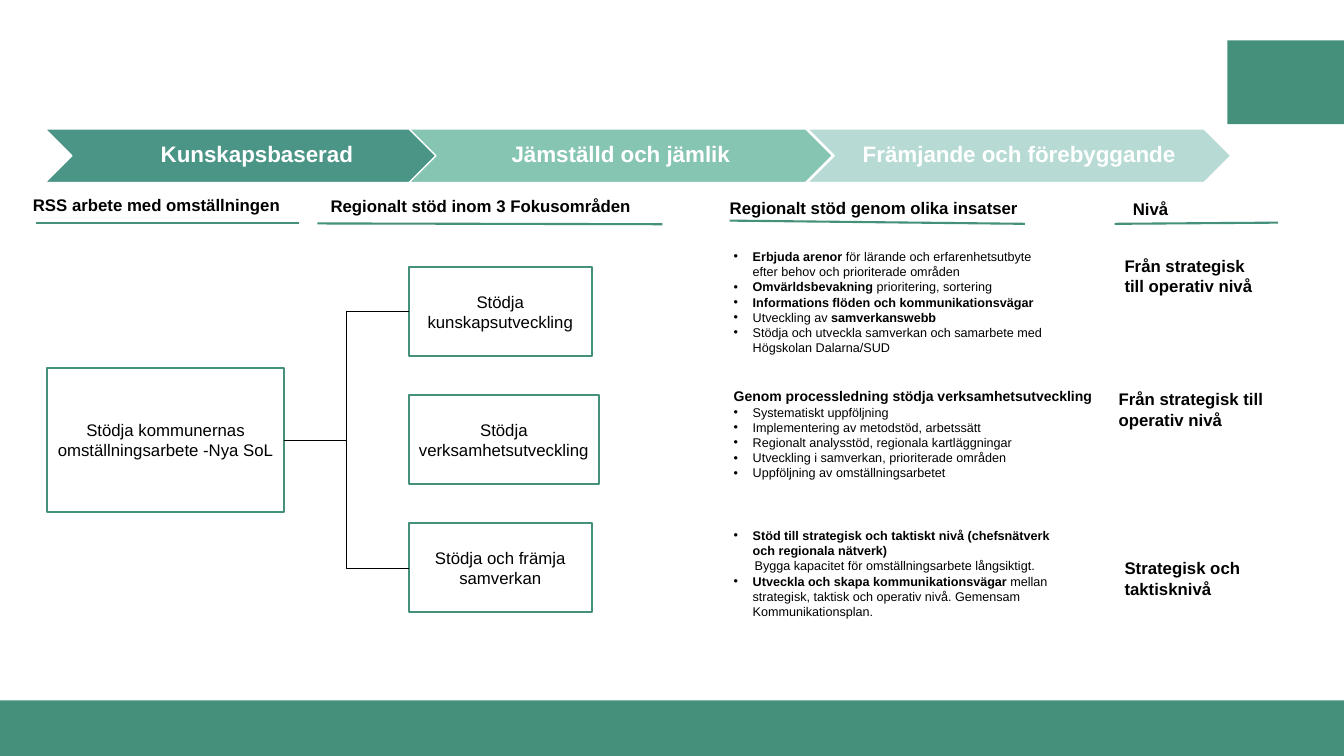
from dataclasses import dataclass

from lxml.etree import SubElement
from pptx import Presentation
from pptx.dml.color import RGBColor
from pptx.enum.shapes import MSO_CONNECTOR as Connector, MSO_SHAPE as Preset
from pptx.enum.text import MSO_ANCHOR as Anchor, PP_ALIGN as Align
from pptx.oxml.ns import qn
from pptx.util import Cm, Pt

COLORS = {
    "green": "45907A",
    "teal": "4B9587",
    "mint": "87C5B3",
    "pale": "B7DBD4",
    "white": "FFFFFF",
    "black": "000000",
}
FONT = "Arial"
BULLET_INDENT = Cm(0.48)
RIGHT_SITE, LEFT_SITE = 3, 1


@dataclass
class Run:
    text: str
    bold: bool = False


@dataclass
class Para:
    runs: list[Run]
    bullet: bool = True
    size: float = 9
    indent: float = 0


@dataclass
class Heading:
    text: str
    left: float
    top: float
    width: float
    rule: tuple[float, float, float, float]


@dataclass
class Measures:
    top: float
    width: float
    height: float
    paras: list[Para]


@dataclass
class Level:
    text: str
    left: float
    top: float
    width: float


def plain(text: str) -> Para:
    return Para([Run(text)])


def bold(text: str) -> Run:
    return Run(text, True)


CHEVRONS = [
    ("Kunskapsbaserad", 1.14, "teal"),
    ("Jämställd och jämlik", 10.31, "mint"),
    ("Främjande och förebyggande", 20.35, "pale"),
]
HEADINGS = [
    Heading("RSS arbete med omställningen", 0.58, 4.78, 7.57, (0.91, 5.61, 7.54, 5.61)),
    Heading("Regionalt stöd inom 3 Fokusområden", 8.08, 4.8, 8.46, (8, 5.63, 16.69, 5.65)),
    Heading("Regionalt stöd genom olika insatser", 18.14, 4.85, 8.23, (18.39, 5.56, 25.83, 5.64)),
    Heading("Nivå", 28.3, 4.88, 4.45, (28.09, 5.64, 32.21, 5.61)),
]
FOCUS_AREAS = [
    ("Stödja kunskapsutveckling", 4.6),
    ("Stödja verksamhetsutveckling", 4.78),
    ("Stödja och främja samverkan", 4.6),
]
MEASURES = [
    Measures(6.15, 8.59, 3.02, [
        Para([bold("Erbjuda arenor "),
              Run("för lärande och erfarenhetsutbyte efter behov och prioriterade områden")]),
        Para([bold("Omvärldsbevakning"), Run(" prioritering, sortering")]),
        Para([bold("Informations flöden och kommunikationsvägar")]),
        Para([Run("Utveckling av "), bold("samverkanswebb")]),
        plain("Stödja och utveckla samverkan och samarbete med Högskolan Dalarna/SUD"),
    ]),
    Measures(9.65, 10.06, 2.59, [
        Para([bold("Genom processledning stödja verksamhetsutveckling")], bullet=False, size=10),
        plain("Systematiskt uppföljning"),
        plain("Implementering av metodstöd, arbetssätt"),
        plain("Regionalt analysstöd, regionala kartläggningar"),
        plain("Utveckling i samverkan, prioriterade områden"),
        plain("Uppföljning av omställningsarbetet"),
    ]),
    Measures(13.18, 8.92, 3.07, [
        Para([bold("Stöd till strategisk och taktiskt nivå (chefsnätverk och regionala nätverk)")]),
        Para([Run("Bygga kapacitet för omställningsarbete långsiktigt.")], bullet=False, indent=0.53),
        Para([bold("Utveckla och skapa kommunikationsvägar "),
              Run("mellan strategisk, taktisk och operativ nivå. Gemensam Kommunikationsplan.")]),
    ]),
]
LEVELS = [
    Level("Från strategisk till operativ nivå", 28.09, 6.32, 4.09),
    Level("Från strategisk till operativ nivå", 27.94, 9.68, 4.27),
    Level("Strategisk och taktisknivå", 28.09, 13.94, 5.21),
]


def rgb(name: str) -> RGBColor:
    return RGBColor.from_string(COLORS[name])


def write(frame, paras: list[Para], *, color: str = "black", align=Align.LEFT,
          anchor=Anchor.TOP, spacing: float = 1.0, side_inset: float = 0.25) -> None:
    """Fill a text frame with formatted paragraphs."""
    frame.word_wrap = True
    frame.vertical_anchor = anchor
    frame.margin_left = frame.margin_right = Cm(side_inset)
    for index, para in enumerate(paras):
        line = frame.add_paragraph() if index else frame.paragraphs[0]
        line.alignment = align
        line.line_spacing = spacing
        props = line._p.get_or_add_pPr()
        if para.bullet:
            props.set("marL", str(BULLET_INDENT))
            props.set("indent", str(-BULLET_INDENT))
            SubElement(props, qn("a:buFont"), typeface=FONT)
            SubElement(props, qn("a:buChar"), char="•")
        else:
            props.set("marL", str(Cm(para.indent)))
            props.set("indent", "0")
            SubElement(props, qn("a:buNone"))
        for part in para.runs:
            run = line.add_run()
            run.text = part.text
            run.font.name = FONT
            run.font.size = Pt(para.size)
            run.font.bold = part.bold
            run.font.color.rgb = rgb(color)


def label(text: str, size: float = 12, is_bold: bool = False) -> list[Para]:
    return [Para([Run(text, is_bold)], bullet=False, size=size)]


def add_block(slide, preset, left: float, top: float, width: float, height: float, *,
              fill: str | None = None, line: str | None = None, weight: float = 1.5):
    block = slide.shapes.add_shape(preset, Cm(left), Cm(top), Cm(width), Cm(height))
    block.shadow.inherit = False
    if fill:
        block.fill.solid()
        block.fill.fore_color.rgb = rgb(fill)
    else:
        block.fill.background()
    if line:
        block.line.color.rgb = rgb(line)
        block.line.width = Pt(weight)
    else:
        block.line.fill.background()
    return block


def add_text(slide, left: float, top: float, width: float, height: float,
             paras: list[Para]) -> None:
    box = slide.shapes.add_textbox(Cm(left), Cm(top), Cm(width), Cm(height))
    write(box.text_frame, paras)


def add_line(slide, kind, ends: tuple[float, float, float, float], color: str, weight: float):
    line = slide.shapes.add_connector(kind, *(Cm(value) for value in ends))
    line.line.color.rgb = rgb(color)
    line.line.width = Pt(weight)
    SubElement(line._element.spPr, qn("a:effectLst"))
    return line


def add_box(slide, text: str, left: float, top: float, width: float, height: float):
    box = add_block(slide, Preset.RECTANGLE, left, top, width, height, line="green")
    write(box.text_frame, label(text), align=Align.CENTER, anchor=Anchor.MIDDLE, side_inset=0.2)
    return box


def main() -> None:
    deck = Presentation()
    deck.slide_width, deck.slide_height = Cm(33.87), Cm(19.05)
    slide = deck.slides.add_slide(deck.slide_layouts[6])

    add_block(slide, Preset.RECTANGLE, 30.93, 1.02, 2.94, 2.11, fill="green")
    add_block(slide, Preset.RECTANGLE, 0, 17.65, 33.87, 1.4, fill="green")

    support = add_box(slide, "Stödja kommunernas omställningsarbete -Nya SoL",
                      1.19, 9.27, 5.97, 3.63)
    for row, (text, width) in enumerate(FOCUS_AREAS):
        focus = add_box(slide, text, 10.31, 6.73 + row * 3.23, width, 2.24)
        kind = Connector.STRAIGHT if row == 1 else Connector.ELBOW
        branch = add_line(slide, kind, (7.16, 11.08, 10.31, 11.08), "black", 0.5)
        if row == 1:
            branch._element.getparent().remove(branch._element)
            continue
        branch.begin_connect(support, RIGHT_SITE)
        branch.end_connect(focus, LEFT_SITE)

    for heading in HEADINGS:
        add_line(slide, Connector.STRAIGHT, heading.rule, "green", 1.5)
        add_text(slide, heading.left, heading.top, heading.width, 0.76,
                 label(heading.text, is_bold=True))
    for measures in MEASURES:
        add_text(slide, 18.24, measures.top, measures.width, measures.height, measures.paras)
    for level in LEVELS:
        add_text(slide, level.left, level.top, level.width, 1.3,
                 label(level.text, is_bold=True))

    for text, left, fill in CHEVRONS:
        chevron = add_block(slide, Preset.CHEVRON, left, 3.25, 10.67, 1.35,
                            fill=fill, line="white", weight=1)
        write(chevron.text_frame, label(text, 16, True), color="white", align=Align.CENTER,
              anchor=Anchor.MIDDLE, spacing=0.9, side_inset=0.1)


    deck.save("out.pptx")


if __name__ == "__main__":
    main()
